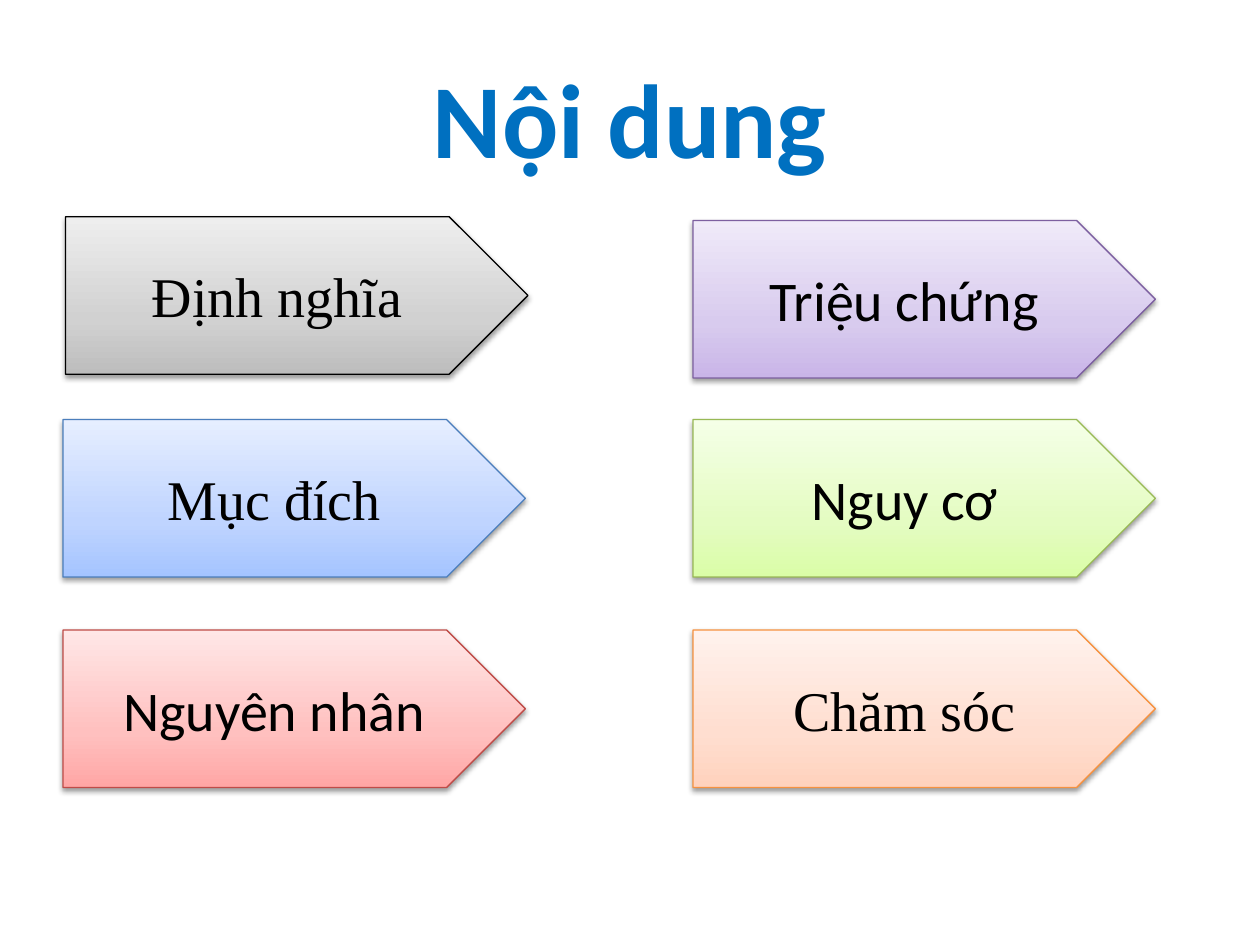
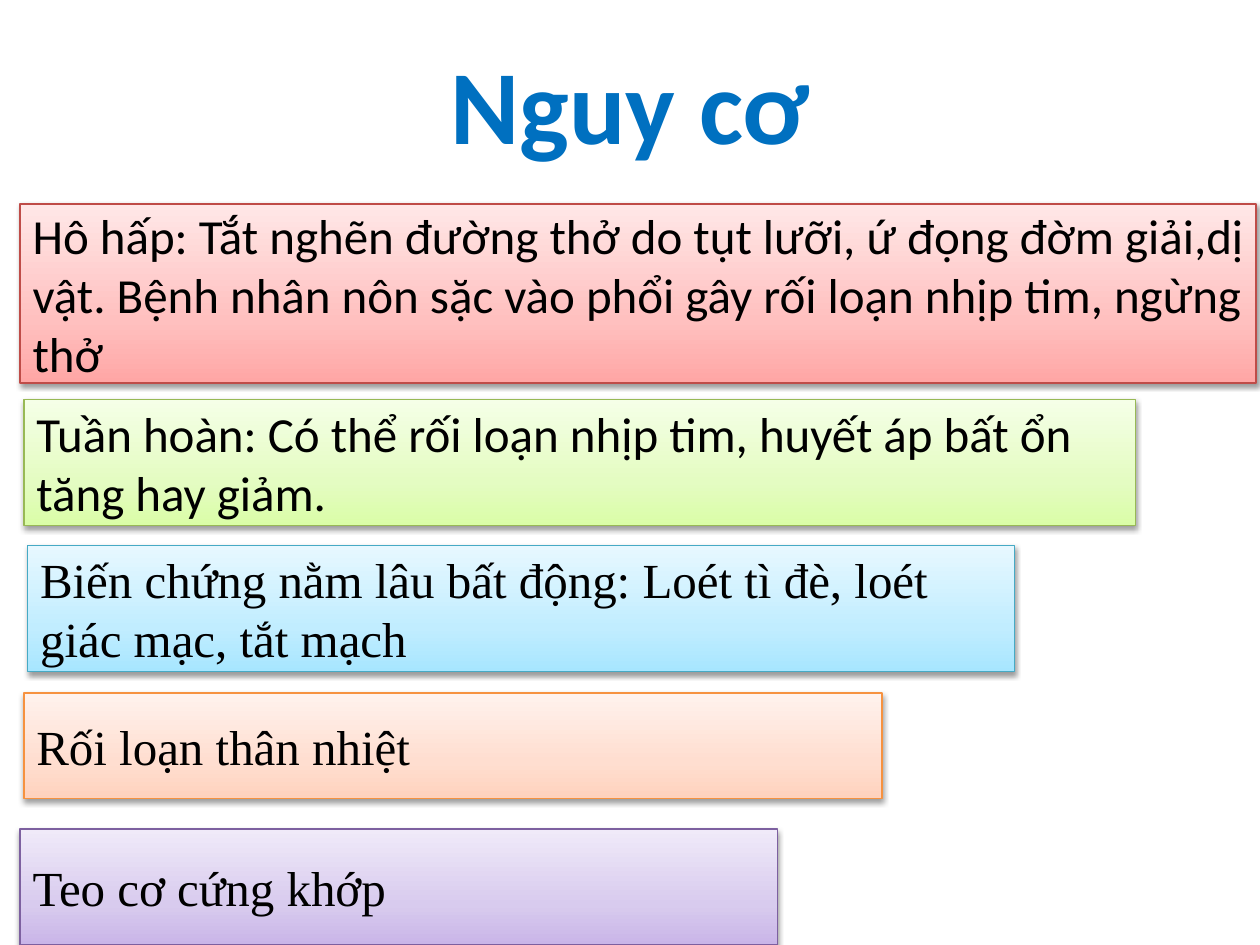
from copy import deepcopy

from lxml import etree
from pptx import Presentation
from pptx import util as u
from pptx.dml.color import RGBColor
from pptx.enum import shapes, text
from pptx.oxml.ns import qn

SANS, SERIF = "Calibri", "Times New Roman"
TITLE_COLOUR, TEXT_COLOUR = "0070C0", "000000"

# Outline, then the gradient from bottom to top
PALETTES = {
    "grey": ("000000", "BDBDBD", "D1D1D1", "EEEEEE"),
    "blue": ("4B7EBC", "A4C4FF", "BFD4FF", "E6EEFF"),
    "red": ("BF4C48", "FFA6A5", "FFC0BF", "FFE7E7"),
    "purple": ("7D60A0", "C9B5E8", "D8CBEE", "F0EAF9"),
    "green": ("98B955", "DAFDA7", "E4FCC2", "F5FFE7"),
    "orange": ("F69240", "FFD2BD", "FFDED0", "FFF2ED"),
    "aqua": ("46AAC5", "A7E6FF", "C1EDFF", "E7F8FF"),
}
STOP_POSITIONS = (0, 0.35, 1)


def colour(hex_string):
    return RGBColor.from_string(hex_string)


class Deck:
    """Holds the presentation, its style and the slide being filled."""

    def __init__(self):
        self.presentation = Presentation()
        self.presentation.slide_width = u.Inches(10)
        self.presentation.slide_height = u.Inches(7.5)
        self.slide = None

    def add_slide(self, title, title_height):
        self.slide = self.presentation.slides.add_slide(self.presentation.slide_layouts[6])
        box = self.slide.shapes.add_textbox(
            *map(u.Inches, (0.5, 0.3, 9, title_height)))
        self.add_words(box, title, 60, SANS, TITLE_COLOUR, text.PP_ALIGN.CENTER, bold=True)

    def add_words(self, shape, words, size, font_name, hex_colour, alignment, bold=False):
        frame = shape.text_frame
        frame.word_wrap = True
        frame.vertical_anchor = text.MSO_ANCHOR.MIDDLE
        paragraph = frame.paragraphs[0]
        paragraph.alignment = alignment
        run = paragraph.add_run()
        run.text = words
        run.font.name = font_name
        run.font.size = u.Pt(size)
        run.font.bold = bold
        run.font.color.rgb = colour(hex_colour)

    def gradient(self, shape, stop_colours):
        shape.fill.gradient()
        shape.fill.gradient_angle = 90
        stop_list = next(shape.element.spPr.iter(qn("a:gsLst")))
        stop_list.append(deepcopy(stop_list[-1]))
        for stop, position, hex_colour in zip(
                shape.fill.gradient_stops, STOP_POSITIONS, stop_colours):
            stop.position = position
            stop.color.rgb = colour(hex_colour)

    def soft_shadow(self, shape):
        shape.shadow.inherit = False
        effects = shape.element.spPr.find(qn("a:effectLst"))
        shadow = etree.SubElement(
            effects, qn("a:outerShdw"), blurRad="40000", dist="20000",
            dir="5400000", rotWithShape="0")
        black = etree.SubElement(shadow, qn("a:srgbClr"), val="000000")
        etree.SubElement(black, qn("a:alpha"), val="38000")

    def panel(self, kind, bounds, palette, words, size, font_name, alignment):
        shape = self.slide.shapes.add_shape(kind, *map(u.Inches, bounds))
        outline, *stop_colours = PALETTES[palette]
        self.gradient(shape, stop_colours)
        shape.line.color.rgb = colour(outline)
        shape.line.width = u.Pt(0.75)
        self.soft_shadow(shape)
        self.add_words(shape, words, size, font_name, TEXT_COLOUR, alignment)

    def topic_arrow(self, left, top, palette, words, font_name):
        self.panel(shapes.MSO_SHAPE.PENTAGON, (left, top, 3.67, 1.25),
                   palette, words, 32, font_name, text.PP_ALIGN.CENTER)

    def risk_bar(self, bounds, palette, words, font_name):
        self.panel(shapes.MSO_SHAPE.RECTANGLE, bounds,
                   palette, words, 28, font_name, text.PP_ALIGN.LEFT)


def build_contents(deck):
    deck.add_slide("Nội dung", 1.25)
    for topic in (
        (5.5, 1.75, "purple", "Triệu chứng", SANS),
        (5.5, 3.33, "green", "Nguy cơ", SANS),
        (0.52, 1.72, "grey", "Định nghĩa", SERIF),
        (0.5, 3.33, "blue", "Mục đích", SERIF),
        (0.5, 5, "red", "Nguyên nhân", SANS),
        (5.5, 5, "orange", "Chăm sóc", SERIF),
    ):
        deck.topic_arrow(*topic)


def build_risks(deck):
    deck.add_slide("Nguy cơ", 1.03)
    for risk in (
        ((0.16, 1.62, 9.81, 1.42), "red",
         "Hô hấp: Tắt nghẽn đường thở do tụt lưỡi, ứ đọng đờm giải,dị vật. "
         "Bệnh nhân nôn sặc vào phổi gây rối loạn nhịp tim, ngừng thở", SANS),
        ((0.19, 3.17, 8.82, 1), "green",
         "Tuần hoàn: Có thể rối loạn nhịp tim, huyết áp bất ổn tăng hay giảm.", SANS),
        ((0.22, 4.33, 7.83, 1), "aqua",
         "Biến chứng nằm lâu bất động: Loét tì đè, loét giác mạc, tắt mạch", SERIF),
        ((0.19, 5.5, 6.81, 0.84), "orange", "Rối loạn thân nhiệt", SERIF),
        ((0.16, 6.58, 6.01, 0.92), "purple", "Teo cơ cứng khớp", SERIF),
    ):
        deck.risk_bar(*risk)


def main():
    deck = Deck()
    build_contents(deck)
    build_risks(deck)
    deck.presentation.save("out.pptx")


if __name__ == "__main__":
    main()
